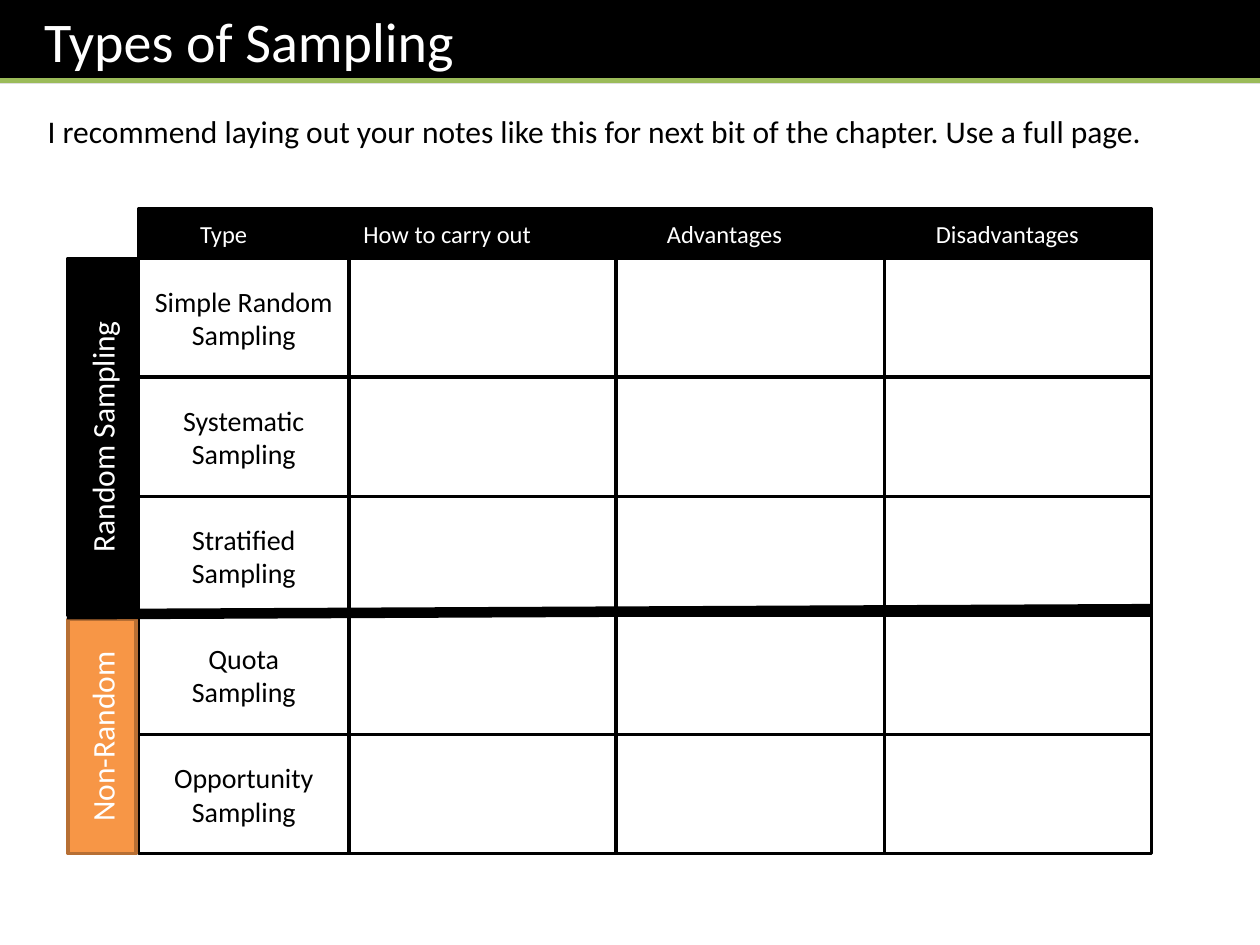
from pptx import Presentation
from pptx.dml.color import RGBColor
from pptx.enum.shapes import MSO_CONNECTOR, MSO_SHAPE
from pptx.enum.text import MSO_ANCHOR, MSO_AUTO_SIZE, PP_ALIGN
from pptx.oxml.ns import qn
from pptx.util import Inches, Pt
from lxml.etree import SubElement

BLACK = RGBColor(0x00, 0x00, 0x00)
WHITE = RGBColor(0xFF, 0xFF, 0xFF)
GREEN = RGBColor(0x9B, 0xBB, 0x59)
ORANGE = RGBColor(0xF7, 0x96, 0x46)
BROWN = RGBColor(0xB7, 0x6F, 0x34)

HEADINGS = ["Type", "How to carry out", "Advantages", "Disadvantages"]
HEADING_WIDTHS = [1.35, 2.2, 2.2, 2.29]
METHODS = ["Simple Random Sampling", "Systematic Sampling", "Stratified Sampling",
           "Quota\nSampling", "Opportunity\nSampling"]
COLUMN_WIDTHS = [1.67, 2.12, 2.13, 2.12]
HEADING_HEIGHT = 0.39
ROW_HEIGHT = 0.945
RANDOM_ROWS = 3


def write(box, text, size=16, color=BLACK, align=PP_ALIGN.CENTER, anchor=MSO_ANCHOR.MIDDLE):
    """Put text in a box, one paragraph for each line."""
    frame = box.text_frame
    frame.word_wrap = True
    frame.auto_size = MSO_AUTO_SIZE.NONE
    frame.vertical_anchor = anchor
    for index, line in enumerate(text.split("\n")):
        para = frame.paragraphs[0] if index == 0 else frame.add_paragraph()
        para.alignment = align
        span = para.add_run()
        span.text = line
        span.font.name = "Calibri"
        span.font.size = Pt(size)
        span.font.color.rgb = color


def add_cell(page, left, top, width, height, fill=WHITE, line=BLACK, turned=False):
    """Add a rectangle; a turned one fills the same area but reads upwards."""
    if turned:
        left, top = left + (width - height) / 2, top + (height - width) / 2
        width, height = height, width
    cell = page.shapes.add_shape(MSO_SHAPE.RECTANGLE, Inches(left), Inches(top),
                                 Inches(width), Inches(height))
    cell.rotation = 270 if turned else 0
    cell.shadow.inherit = False
    cell.fill.solid()
    cell.fill.fore_color.rgb = fill
    cell.line.color.rgb = line
    cell.line.width = Pt(2)
    return cell


def add_rule(page, start, end, color, weight):
    rule = page.shapes.add_connector(MSO_CONNECTOR.STRAIGHT,
                                     *(Inches(value) for value in (*start, *end)))
    rule.line.color.rgb = color
    rule.line.width = Pt(weight)
    SubElement(rule._element.spPr, qn("a:effectLst"))


def build_banner(page, text, width, height):
    title = page.shapes.title
    title.left, title.top = Inches(0), Inches(0)
    title.width, title.height = Inches(width), Inches(height)
    title.fill.solid()
    title.fill.fore_color.rgb = BLACK
    title.text_frame.margin_left = Inches(0.35)
    write(title, text, size=32, color=WHITE, align=PP_ALIGN.LEFT, anchor=MSO_ANCHOR.TOP)
    add_rule(page, (0, height - 0.02), (width, height - 0.02), GREEN, 3)


def build_intro(page, text, left, top, width, height):
    box = page.shapes.add_textbox(Inches(left), Inches(top), Inches(width), Inches(height))
    write(box, text, size=18, align=PP_ALIGN.LEFT, anchor=MSO_ANCHOR.TOP)


def build_grid(page, left, top):
    # Heading row, with its own column widths
    for index, (heading, width) in enumerate(zip(HEADINGS, HEADING_WIDTHS)):
        start = left + sum(HEADING_WIDTHS[:index])
        cell = add_cell(page, start, top, width, HEADING_HEIGHT, fill=BLACK)
        write(cell, heading, size=14, color=WHITE)

    # One row for each method, with blank cells for notes
    for row, method in enumerate(METHODS):
        row_top = top + HEADING_HEIGHT + row * ROW_HEIGHT
        for column, width in enumerate(COLUMN_WIDTHS):
            start = left + sum(COLUMN_WIDTHS[:column])
            cell = add_cell(page, start, row_top, width, ROW_HEIGHT)
            if column == 0:
                write(cell, method)


def build_groups(page, left, top, width, grid_right):
    # Upright labels beside the rows
    split = top + RANDOM_ROWS * ROW_HEIGHT
    bottom = top + len(METHODS) * ROW_HEIGHT
    groups = [("Random Sampling", top, split, BLACK, BLACK),
              ("Non-Random", split + 0.03, bottom, ORANGE, BROWN)]
    for text, start, end, fill, line in groups:
        label = add_cell(page, left, start, width, end - start, fill, line, turned=True)
        write(label, text, size=18, color=WHITE)

    # Heavy, slightly sloping divider between the groups
    add_rule(page, (left - 0.01, split - 0.01), (grid_right, split - 0.05), BLACK, 6)


def main():
    deck = Presentation()
    deck.slide_width, deck.slide_height = Inches(10), Inches(7.5)
    page = deck.slides.add_slide(deck.slide_layouts[5])

    grid_left, grid_top = 1.1, 1.66
    build_banner(page, "Types of Sampling", width=10, height=0.66)
    build_intro(page, "I recommend laying out your notes like this for next bit of the "
                "chapter. Use a full page.", left=0.28, top=0.84, width=9.45, height=0.4)
    build_grid(page, grid_left, grid_top)
    build_groups(page, left=0.54, top=grid_top + HEADING_HEIGHT, width=0.54,
                 grid_right=grid_left + sum(COLUMN_WIDTHS))
    deck.save("out.pptx")


if __name__ == "__main__":
    main()
